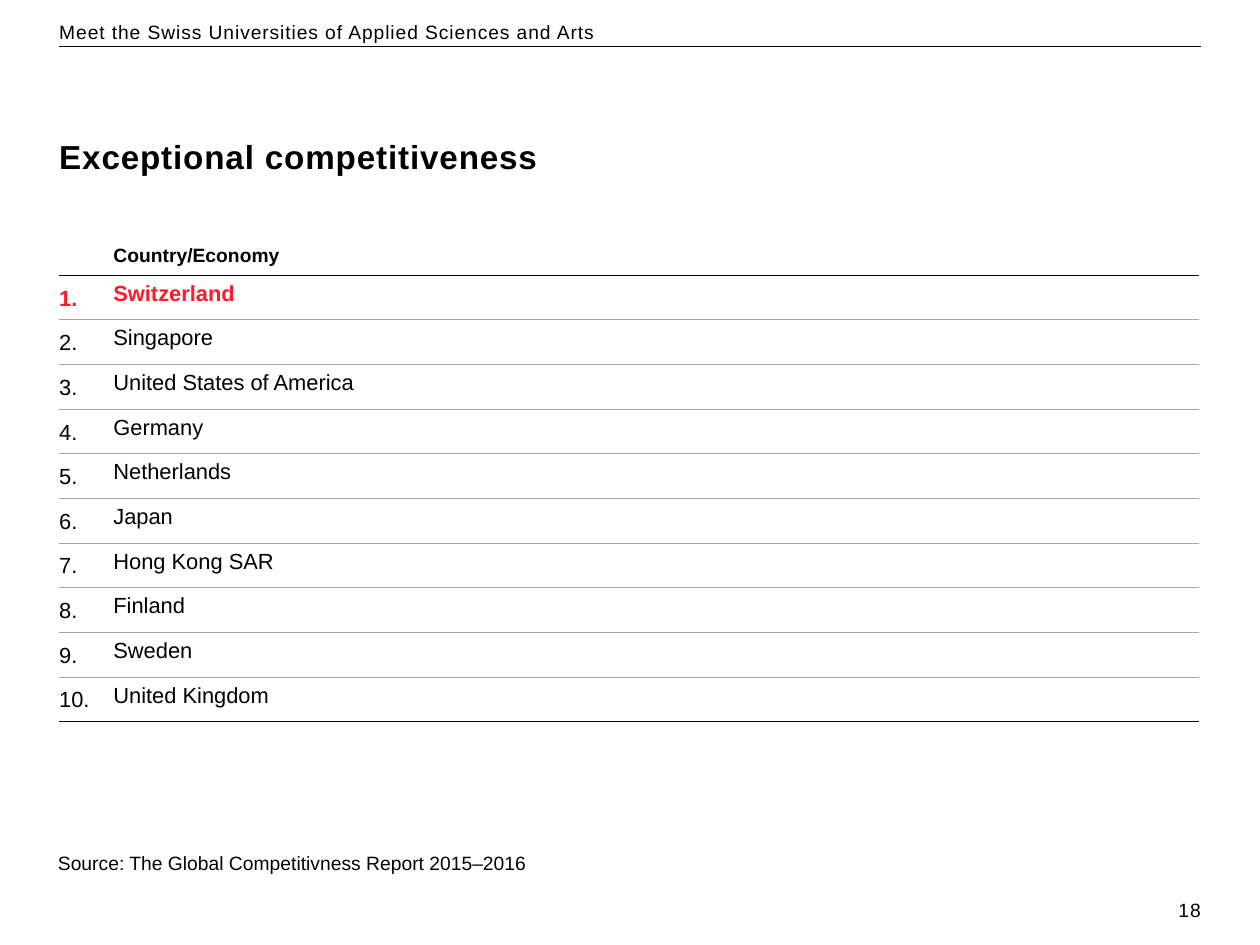
import pptx
import pptx.dml.color
import pptx.enum.shapes
import pptx.enum.text
import pptx.oxml.ns
import pptx.util
from dataclasses import dataclass
from lxml import etree

Inches, Pt = pptx.util.Inches, pptx.util.Pt
ALIGN, ANCHOR = pptx.enum.text.PP_ALIGN, pptx.enum.text.MSO_ANCHOR
qn = pptx.oxml.ns.qn


@dataclass(frozen=True)
class Theme:
    font: str = "Arial"
    black: str = "000000"
    grey: str = "A6A6A6"
    red: str = "FF1A27"
    white: str = "FFFFFF"
    title: float = 19
    small: float = 11
    body: float = 12.5
    tracking: int = 50  # hundredths of a point


class SlideBuilder:
    def __init__(self, slide, theme):
        self.slide, self.theme = slide, theme

    def set_text(self, tf, text, size, color=None, bold=False, align=ALIGN.LEFT,
                 leading=None, tracked=False):
        p = tf.paragraphs[0]
        p.alignment = align
        if leading:
            p.line_spacing = Pt(leading)
        p.font.name, p.font.size, p.font.bold = self.theme.font, Pt(size), bold
        p.font.color.rgb = pptx.dml.color.RGBColor.from_string(color or self.theme.black)
        if text:
            r = p.add_run()
            r.text = text
            if tracked:
                r._r.get_or_add_rPr().set("spc", str(self.theme.tracking))

    def frame(self, sp, box, text, size, **style):
        sp.left, sp.top, sp.width, sp.height = (Inches(v) for v in box)
        tf = sp.text_frame
        tf.word_wrap = True
        tf.auto_size = pptx.enum.text.MSO_AUTO_SIZE.NONE
        tf.vertical_anchor = ANCHOR.TOP
        tf.margin_left = tf.margin_top = tf.margin_right = tf.margin_bottom = 0
        self.set_text(tf, text, size, **style)

    def title(self, box, text):
        self.frame(self.slide.shapes.title, box, text, self.theme.title,
                   bold=True, leading=22.8, tracked=True)

    def text(self, box, text, **style):
        sp = self.slide.shapes.add_textbox(0, 0, 0, 0)
        self.frame(sp, box, text, self.theme.small, **style)

    def rule(self, x1, x2, y):
        sp = self.slide.shapes.add_connector(
            pptx.enum.shapes.MSO_CONNECTOR.STRAIGHT,
            Inches(x1), Inches(y), Inches(x2), Inches(y))
        sp.line.width = Pt(0.6)
        sp.line.color.rgb = pptx.dml.color.RGBColor.from_string(self.theme.black)
        etree.SubElement(sp._element.spPr, qn("a:effectLst"))

    def cell_style(self, cell, top, bottom):
        tcPr = cell._tc.get_or_add_tcPr()
        for side, color in (("L", None), ("R", None), ("T", top), ("B", bottom)):
            ln = etree.SubElement(tcPr, qn(f"a:ln{side}"), w=str(Pt(0.5)))
            if color:
                fill = etree.SubElement(ln, qn("a:solidFill"))
                etree.SubElement(fill, qn("a:srgbClr"), val=color)
            else:
                etree.SubElement(ln, qn("a:noFill"))
        cell.fill.solid()
        cell.fill.fore_color.rgb = pptx.dml.color.RGBColor.from_string(self.theme.white)
        cell.margin_left = cell.margin_top = cell.margin_right = cell.margin_bottom = 0
        cell.vertical_anchor = ANCHOR.MIDDLE

    def ranking(self, box, widths, heading, names):
        t = self.theme
        rows = [("", heading, "")] + [(f"{n}.", name, "") for n, name in enumerate(names, 1)]
        table = self.slide.shapes.add_table(
            len(rows), len(widths), *(Inches(v) for v in box)).table
        table.first_row = table.horz_banding = False
        for column, width in zip(table.columns, widths):
            column.width = Inches(width)
        # Black lines frame the ranking, grey lines divide it
        edges = [None, t.black] + [t.grey] * (len(names) - 1) + [t.black]
        for i, row in enumerate(rows):
            size = t.body if i else t.small
            color = t.red if i == 1 else t.black
            for j, text in enumerate(row):
                cell = table.cell(i, j)
                self.cell_style(cell, edges[i], edges[i + 1])
                is_name = i > 0 and j == 1
                if is_name:
                    cell.vertical_anchor = ANCHOR.TOP
                    cell.margin_top = cell.margin_bottom = Inches(0.05)
                    cell.margin_right = Inches(0.1)
                self.set_text(cell.text_frame, text, size, color=color, bold=i < 2,
                              leading=None if is_name else 15)


def main():
    prs = pptx.Presentation()
    prs.slide_width, prs.slide_height = Inches(10), Inches(7.5)
    slide = prs.slides.add_slide(prs.slide_layouts[5])
    s = SlideBuilder(slide, Theme())
    left, width = 0.47, 9.06

    # Running header
    s.rule(left, left + width, 0.37)
    s.text((left, 0.16, width, 0.37),
           "Meet the Swiss Universities of Applied Sciences and Arts",
           leading=13.2, tracked=True)

    # Title
    s.title((left, 1.08, width, 0.7), "Exceptional competitiveness")

    # Page number and source
    s.text((8.94, 7.13, 0.59, 0.2), "18", align=ALIGN.RIGHT, leading=13.2, tracked=True)
    s.text((0.46, 6.76, 5.09, 0.22), "Source: The Global Competitivness Report 2015–2016")

    # Ranking table
    s.ranking((left, 1.83, width, 3.9), (0.43, 4.25, 4.37), "Country/Economy",
              ["Switzerland", "Singapore", "United States of America", "Germany",
               "Netherlands", "Japan", "Hong Kong SAR", "Finland", "Sweden",
               "United Kingdom"])

    prs.save("out.pptx")


if __name__ == "__main__":
    main()
